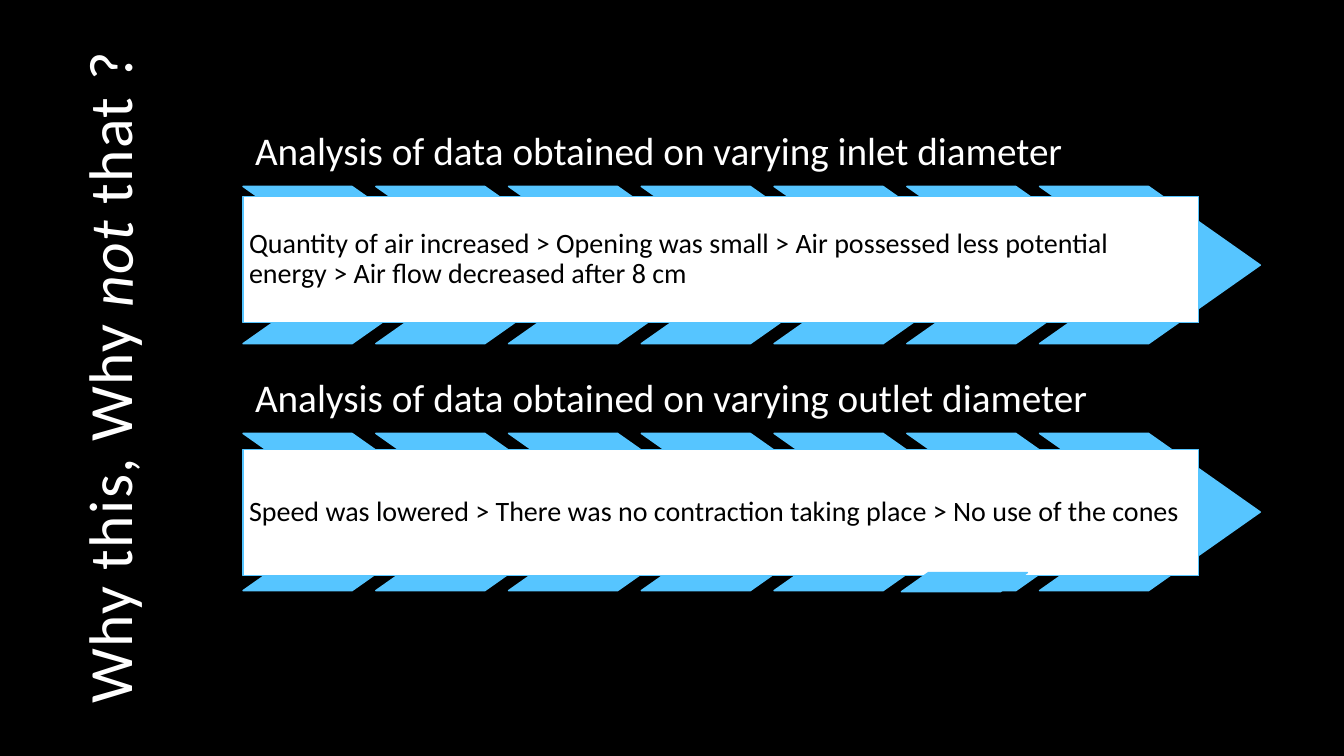
from dataclasses import dataclass

from pptx import Presentation
from pptx.dml.color import RGBColor
from pptx.enum.shapes import MSO_SHAPE as Preset
from pptx.enum.text import MSO_ANCHOR as Anchor, PP_ALIGN as Align
from pptx.shapes.autoshape import Shape
from pptx.slide import Slide
from pptx.text.text import TextFrame
from pptx.util import Inches, Pt

BLACK, WHITE, SKY = "000000", "FFFFFF", "56C5FF"
LEFT = 2.41
CHEVRON_COUNT = 7
CHEVRON_STEP = 7.9 / 6


@dataclass
class Box:
    left: float
    top: float
    width: float
    height: float

    def lengths(self) -> list[Inches]:
        return [Inches(n) for n in (self.left, self.top, self.width, self.height)]


@dataclass
class Section:
    top: float
    panel_top: float
    heading: str
    finding: str


SECTIONS = [
    Section(1.08, 1.95, "Analysis of data obtained on varying inlet diameter",
            "Quantity of air increased > Opening was small > Air possessed less "
            "potential energy > Air flow decreased after 8 cm"),
    Section(3.53, 4.46, "Analysis of data obtained on varying outlet diameter",
            "Speed was lowered > There was no contraction taking place > "
            "No use of the cones"),
]
TITLE_RUNS = [("Why this, Why ", False), ("not", True), (" that ?", False)]


def color(value: str) -> RGBColor:
    return RGBColor.from_string(value)


def add_preset(slide: Slide, preset: Preset, box: Box, fill: str) -> Shape:
    shape = slide.shapes.add_shape(preset, *box.lengths())
    shape.shadow.inherit = False
    shape.fill.solid()
    shape.fill.fore_color.rgb = color(fill)
    shape.line.color.rgb = color(SKY)
    shape.line.width = Pt(1)
    return shape


def format_text(frame: TextFrame, size: int, ink: str, anchor: Anchor,
                align: Align, side: float, end: float) -> None:
    frame.word_wrap = True
    frame.vertical_anchor = anchor
    frame.margin_left = frame.margin_right = Inches(side)
    frame.margin_top = frame.margin_bottom = Inches(end)
    paragraph = frame.paragraphs[0]
    paragraph.alignment = align
    paragraph.line_spacing = 0.9
    paragraph.font.size = Pt(size)
    paragraph.font.name = "Calibri"
    paragraph.font.color.rgb = color(ink)


def add_section(slide: Slide, section: Section) -> None:
    heading = slide.shapes.add_textbox(*Box(LEFT, section.top, 9.36, 0.77).lengths())
    heading.text_frame.text = section.heading
    format_text(heading.text_frame, 28, WHITE, Anchor.BOTTOM, Align.LEFT, 0.12, 0.12)

    for index in range(CHEVRON_COUNT):
        box = Box(LEFT + index * CHEVRON_STEP, section.top + 0.77, 2.19, 1.56)
        chevron = add_preset(slide, Preset.CHEVRON, box, SKY)
        chevron.adjustments[0] = 0.71

    panel_box = Box(LEFT, section.panel_top, 9.48, 1.25)
    panel = add_preset(slide, Preset.RECTANGLE, panel_box, WHITE)
    panel.text_frame.text = section.finding
    format_text(panel.text_frame, 20, BLACK, Anchor.MIDDLE, Align.LEFT, 0.06, 0.06)


def add_title(slide: Slide) -> None:
    title = slide.shapes.add_textbox(*Box(-3, 3, 7.5, 1.5).lengths())
    title.rotation = 270
    paragraph = title.text_frame.paragraphs[0]
    for text, italic in TITLE_RUNS:
        run = paragraph.add_run()
        run.text = text
        run.font.italic = italic
        run._r.get_or_add_rPr().set("spc", "100")
    format_text(title.text_frame, 44, WHITE, Anchor.BOTTOM, Align.CENTER, 0.1, 0.05)


def main() -> None:
    presentation = Presentation()
    presentation.slide_width = Inches(13.33)
    presentation.slide_height = Inches(7.5)
    slide = presentation.slides.add_slide(presentation.slide_layouts[6])
    slide.background.fill.solid()
    slide.background.fill.fore_color.rgb = color(BLACK)

    for section in SECTIONS:
        add_section(slide, section)
    accent = add_preset(slide, Preset.PARALLELOGRAM, Box(8.94, 5.68, 1.25, 0.19), SKY)
    accent.adjustments[0] = 1.41
    add_title(slide)
    presentation.save("out.pptx")


if __name__ == "__main__":
    main()
